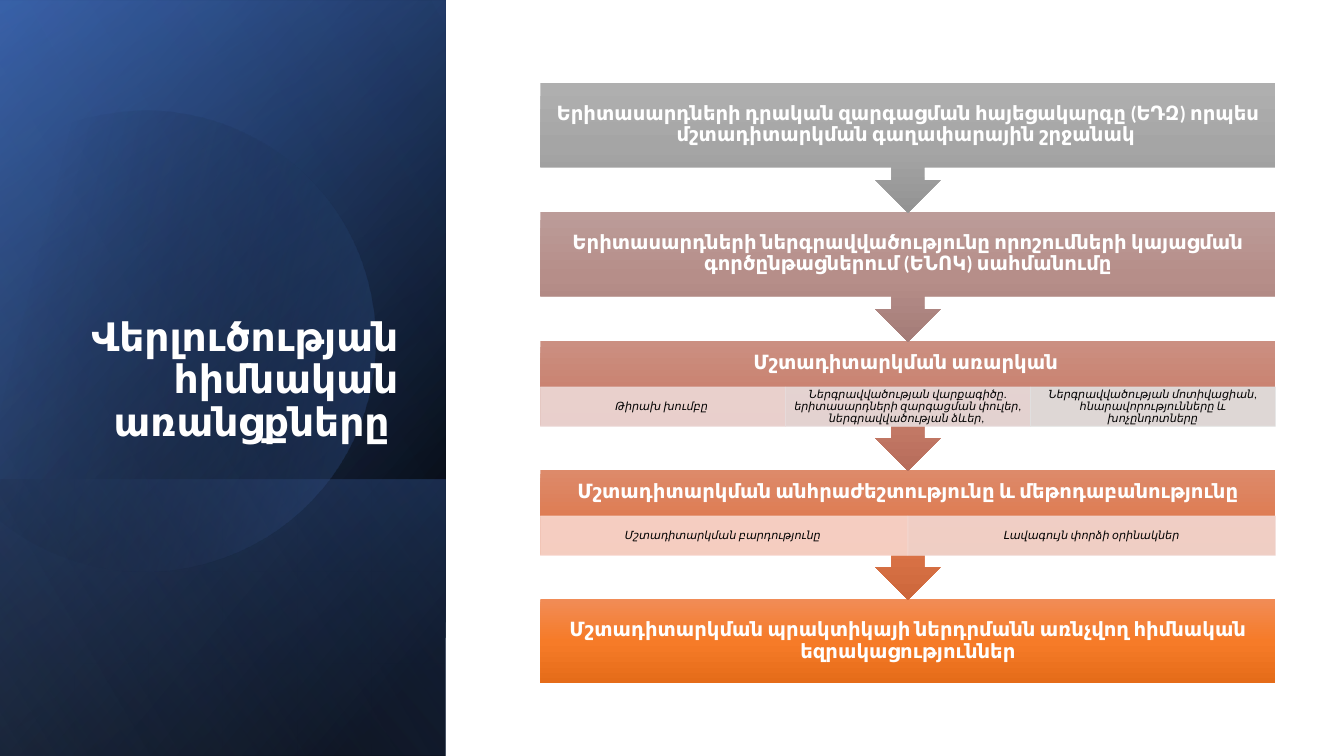
import math
import pptx
import pptx.util
import pptx.oxml
import pptx.oxml.ns
import pptx.dml.color
import pptx.enum.shapes
import pptx.enum.text

Inches, Pt = pptx.util.Inches, pptx.util.Pt
SHAPE = pptx.enum.shapes.MSO_SHAPE
ANCHOR = pptx.enum.text.MSO_ANCHOR
ALIGN = pptx.enum.text.PP_ALIGN

TITLE = "Վերլուծության հիմնական առանցքները "
PANEL = (-1.54, 1.54, 7.5, 4.42)
BASE_PANELS = [
    (PANEL, [(8, "000000", 100), (100, "2F5597", 100)], 50),
    ((-1.54, 1.55, 7.5, 4.42), [(0, "000000", 0), (99, "4472C4", 46)], 30),
    ((0.84, 3.92, 2.74, 4.42), [(2, "4472C4", 29), (100, "000000", 30)], 130),
]
TOP_PANEL = (PANEL, [(0, "000000", 0), (99, "8FAADC", 11)], 120)
DISC_START = (1.49, 1.1)
DISC_CURVES = [
    [(2.46, 1.12), (3.35, 1.77), (3.63, 2.75)],
    [(3.98, 3.97), (3.28, 5.23), (2.07, 5.58)],
    [(1.31, 5.8), (0.53, 5.61), (-0.03, 5.14)],
    [(-0.15, 5.03)],
    [(-0.15, 1.75)],
    [(0, 1.61)],
    [(0.23, 1.42), (0.5, 1.28), (0.8, 1.19)],
    [(1.03, 1.13), (1.26, 1.1), (1.49, 1.1)],
]
DISC_CENTER, DISC_ROTATION = (1.585, 3.345), 343.9
DISC_STOPS = [(29, "000000", 0), (100, "4472C4", 43)]
STEPS = [
    ("Երիտասարդների դրական զարգացման հայեցակարգը (ԵԴԶ) որպես մշտադիտարկման գաղափարային շրջանակ ",
     ("AFAFAF", "A5A5A5", "939393"), []),
    ("Երիտասարդների ներգրավվածությունը որոշումների կայացման գործընթացներում (ԵՆՈԿ) սահմանումը",
     ("BC9C99", "B68E89", "A47C78"), []),
    ("Մշտադիտարկման առարկան ", ("CB8F81", "C97E6B", "B76D5B"), [
        ("Թիրախ խումբը ", "EDD9D7"),
        ("Ներգրավվածության վարքագիծը. երիտասարդների զարգացման փուլեր, ներգրավվածության ձևեր, ", "E7DCDC"),
        ("Ներգրավվածության մոտիվացիան, հնարավորությունները և խոչընդոտները", "E1E1E1"),
    ]),
    ("Մշտադիտարկման անհրաժեշտությունը և մեթոդաբանությունը", ("DD8A6A", "DE774B", "CD673B"), [
        ("Մշտադիտարկման բարդությունը ", "F8D7CE"),
        ("Լավագույն փորձի օրինակներ", "F2D8D2"),
    ]),
    ("Մշտադիտարկման պրակտիկայի ներդրմանն առնչվող հիմնական եզրակացություններ",
     ("F18C57", "F67B28", "E56C19"), []),
]
LEFT, TOP, WIDTH, PITCH = 5.36, 0.82, 7.29, 1.28
BOX_H, CALLOUT_H, HEAD_H, CELL_DY, CELL_H = 0.84, 1.29, 0.45, 0.46, 0.39
TITLE_FONT = {"size": Pt(28), "bold": True}
STEP_FONT = {"size": Pt(14), "bold": True}
CELL_FONT = {"size": Pt(8), "italic": True}


def rgb(value):
    return pptx.dml.color.RGBColor.from_string(value)


def color_xml(value, alpha):
    return f'<a:srgbClr val="{value}"><a:alpha val="{alpha * 1000}"/></a:srgbClr>'


def set_fill(fill_parent, xml):
    old = fill_parent.find(pptx.oxml.ns.qn("a:noFill"))
    fill_parent.replace(old, pptx.oxml.parse_xml(xml))


def gradient(sp, stops, angle, rotate=1):
    sp.shadow.inherit = False
    sp.line.fill.background()
    sp.fill.background()
    gs = "".join(f'<a:gs pos="{pos * 1000}">{color_xml(c, a)}</a:gs>' for pos, c, a in stops)
    set_fill(sp._element.spPr,
             f'<a:gradFill {pptx.oxml.ns.nsdecls("a")} rotWithShape="{rotate}"><a:gsLst>{gs}</a:gsLst>'
             f'<a:lin ang="{angle * 60000}" scaled="0"/></a:gradFill>')


def tint(sp, value):
    sp.shadow.inherit = False
    sp.fill.background()
    sp.line.width = Pt(0.5)
    sp.line.fill.background()
    xml = f'<a:solidFill {pptx.oxml.ns.nsdecls("a")}>{color_xml(value, 90)}</a:solidFill>'
    for parent in (sp._element.spPr, sp.line._ln):
        set_fill(parent, xml)


def add_shape(kind, box):
    return s.shapes.add_shape(kind, *map(Inches, box))


def add_text(box):
    return s.shapes.add_textbox(*map(Inches, box))


def write(sp, text, font, color, insets, align=ALIGN.CENTER, anchor=ANCHOR.MIDDLE):
    tf = sp.text_frame
    frame = {"word_wrap": True, "vertical_anchor": anchor,
             "margin_left": Inches(insets[0]), "margin_right": Inches(insets[0]),
             "margin_top": Inches(insets[1]), "margin_bottom": Inches(insets[1])}
    for name, value in frame.items():
        setattr(tf, name, value)
    p = tf.paragraphs[0]
    p.alignment, p.line_spacing = align, 0.9
    r = p.add_run()
    r.text = text
    for name, value in {"name": "Calibri", **font}.items():
        setattr(r.font, name, value)
    r.font.color.rgb = rgb(color)


def add_panel(box, stops, angle):
    sp = add_shape(SHAPE.RECTANGLE, box)
    sp.rotation = 90
    sp._element.spPr.get_or_add_xfrm().set("flipH", "1")
    gradient(sp, stops, angle)


def bezier(points, t):
    while len(points) > 1:
        points = [(a[0] + (b[0] - a[0]) * t, a[1] + (b[1] - a[1]) * t)
                  for a, b in zip(points, points[1:])]
    return points[0]


def unrotate(point):
    a = math.radians(-DISC_ROTATION)
    dx, dy = point[0] - DISC_CENTER[0], point[1] - DISC_CENTER[1]
    return (Inches(DISC_CENTER[0] + dx * math.cos(a) - dy * math.sin(a)),
            Inches(DISC_CENTER[1] + dx * math.sin(a) + dy * math.cos(a)))


def add_disc():
    points = [DISC_START]
    for curve in DISC_CURVES:
        start, n = points[-1], 24 if len(curve) > 1 else 1
        points += [bezier([start, *curve], i / n) for i in range(1, n + 1)]
    points = [unrotate(point) for point in points]
    builder = s.shapes.build_freeform(*points[0], scale=1.0)
    builder.add_line_segments(points[1:], close=True)
    sp = builder.convert_to_shape()
    sp.rotation = DISC_ROTATION
    gradient(sp, DISC_STOPS, 30)


def add_step(i, text, colors, cells):
    top = TOP + i * PITCH
    last = i == len(STEPS) - 1
    kind, height = (SHAPE.RECTANGLE, BOX_H) if last else (SHAPE.UP_ARROW_CALLOUT, CALLOUT_H)
    sp = add_shape(kind, (LEFT, top, WIDTH, height))
    sp.rotation = 0 if last else 180
    gradient(sp, [(pos, c, 100) for pos, c in zip((0, 50, 100), colors)], 90, rotate=0)
    label = add_text((LEFT, top, WIDTH, HEAD_H if cells else BOX_H))
    write(label, text, STEP_FONT, "FFFFFF", (0.11, 0.11))
    for j, (cell, color) in enumerate(cells):
        w = WIDTH / len(cells)
        sp = add_shape(SHAPE.RECTANGLE, (LEFT + j * w, top + CELL_DY, w, CELL_H))
        tint(sp, color)
        write(sp, cell, CELL_FONT, "000000", (0.06, 0.01))


prs = pptx.Presentation()
prs.slide_width, prs.slide_height = Inches(13.33), Inches(7.5)
s = prs.slides.add_slide(prs.slide_layouts[6])
for panel in BASE_PANELS:
    add_panel(*panel)
add_disc()
add_panel(*TOP_PANEL)
write(add_text((0.64, 1.84, 3.41, 2.62)), TITLE, TITLE_FONT, "FFFFFF", (0.1, 0.05),
      ALIGN.RIGHT, ANCHOR.BOTTOM)
for i, step in reversed(list(enumerate(STEPS))):
    add_step(i, *step)
prs.save("out.pptx")
